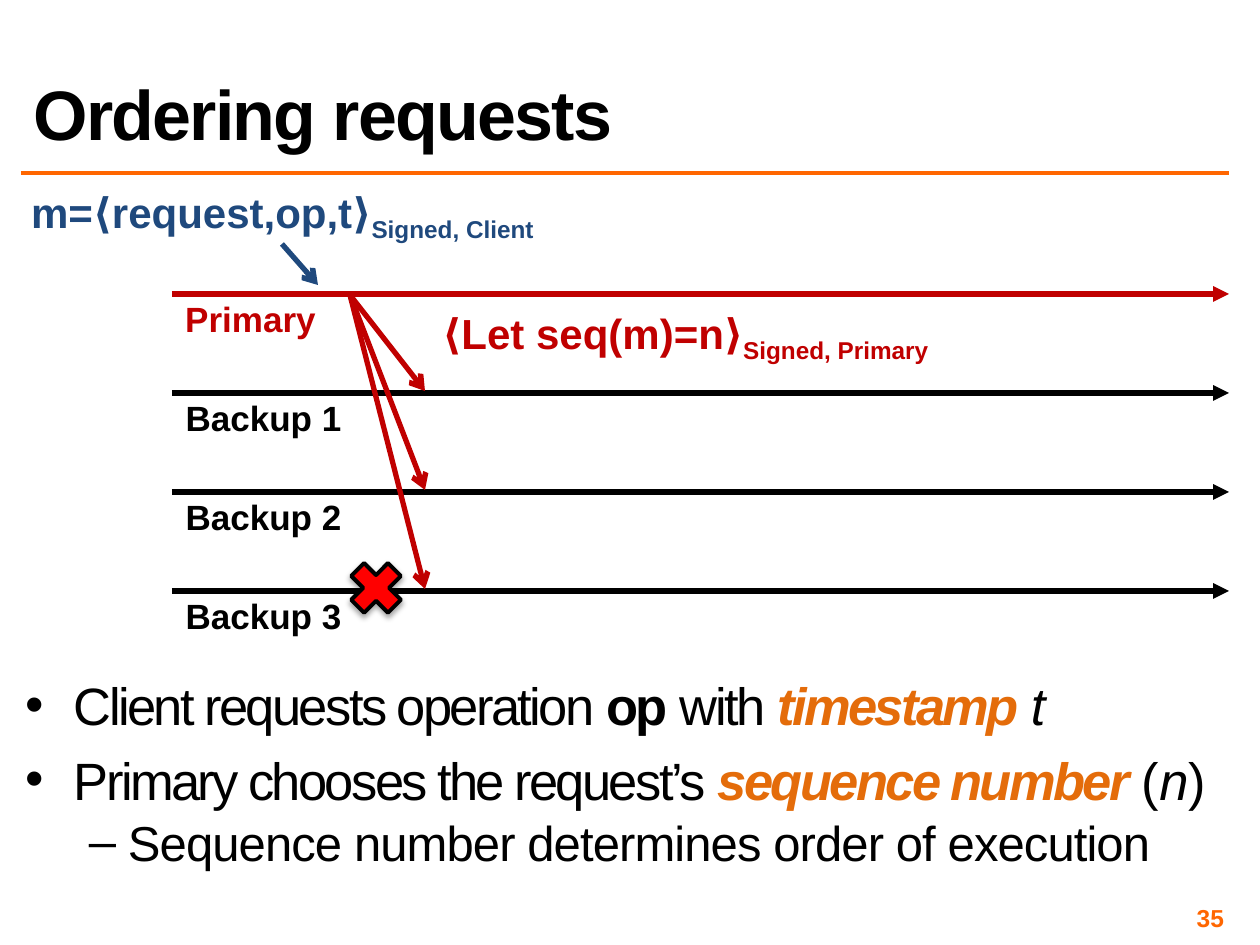
import pptx
import pptx.util
import pptx.dml.color
import pptx.enum.shapes
import pptx.enum.text
import pptx.oxml
import pptx.oxml.ns

BLACK = pptx.dml.color.RGBColor(0x00, 0x00, 0x00)
RED = pptx.dml.color.RGBColor(0xC0, 0x00, 0x00)
BRIGHT_RED = pptx.dml.color.RGBColor(0xFF, 0x00, 0x00)
NAVY = pptx.dml.color.RGBColor(0x1F, 0x49, 0x7D)
ORANGE = pptx.dml.color.RGBColor(0xFF, 0x66, 0x00)
DARK_ORANGE = pptx.dml.color.RGBColor(0xE4, 0x6C, 0x0A)
NAMESPACE = pptx.oxml.ns.nsdecls("a")
ALIGN = pptx.enum.text.PP_ALIGN
ANCHOR = pptx.enum.text.MSO_ANCHOR


def px(value):
    return pptx.util.Emu(round(value * 914400 / 126))


class SlideBuilder:
    font_name = "Arial"

    def __init__(self, presentation):
        self.slide = presentation.slides.add_slide(presentation.slide_layouts[5])

    def place(self, shape, box):
        for name, value in zip(("left", "top", "width", "height"), box):
            setattr(shape, name, px(value))

    def add_run(self, paragraph, text, size, color=BLACK, spacing=0, baseline=0, **formats):
        run = paragraph.add_run()
        run.text = text
        values = {"name": self.font_name, "size": pptx.util.Pt(size), **formats}
        for name, value in values.items():
            setattr(run.font, name, value)
        run.font.color.rgb = color
        properties = run._r.get_or_add_rPr()
        for name, value in {"spc": spacing, "baseline": baseline}.items():
            if value:
                properties.set(name, str(value))

    def set_frame(self, shape, **formats):
        for name, value in formats.items():
            setattr(shape.text_frame, name, value)
        return shape.text_frame

    def title(self, text, box):
        shape = self.slide.shapes.title
        self.place(shape, box)
        frame = self.set_frame(shape, vertical_anchor=ANCHOR.BOTTOM, word_wrap=True,
                               auto_size=pptx.enum.text.MSO_AUTO_SIZE.NONE)
        paragraph = frame.paragraphs[0]
        paragraph.alignment = ALIGN.LEFT
        paragraph.line_spacing = 0.8
        self.add_run(paragraph, text, 40, bold=True, spacing=-100)

    def text(self, box, runs, align=ALIGN.CENTER, **formats):
        shape = self.slide.shapes.add_textbox(*map(px, box))
        frame = self.set_frame(shape, **{"word_wrap": False, **formats})
        paragraph = frame.paragraphs[0]
        paragraph.alignment = align
        for text, style in runs:
            self.add_run(paragraph, text, **style)

    def message(self, box, text, signers, color):
        style = {"size": 24, "color": color, "bold": True}
        self.text(box, [(text, style), (signers, {**style, "baseline": -25000})])

    def bullets(self, box, items):
        shape = self.slide.shapes.add_textbox(*map(px, box))
        margins = ("margin_left", "margin_top", "margin_right", "margin_bottom")
        frame = self.set_frame(shape, word_wrap=True, **dict.fromkeys(margins, px(5)))
        levels = [
            {"bullet": "•", "left": 48, "hang": 48, "before": 14, "size": 30, "spacing": -150},
            {"bullet": "–", "left": 102, "hang": 39, "before": 8, "size": 28, "spacing": -50},
        ]
        for index, (level, runs) in enumerate(items):
            style = levels[level]
            paragraph = frame.add_paragraph() if index else frame.paragraphs[0]
            paragraph.level = level
            paragraph.line_spacing = 0.8
            paragraph.space_before = pptx.util.Pt(style["before"])
            properties = paragraph._p.get_or_add_pPr()
            properties.set("marL", str(px(style["left"])))
            properties.set("indent", str(px(-style["hang"])))
            for xml in (f'<a:buFont {NAMESPACE} typeface="{self.font_name}"/>',
                        f'<a:buChar {NAMESPACE} char="{style["bullet"]}"/>'):
                properties.append(pptx.oxml.parse_xml(xml))
            for text, formats in runs:
                self.add_run(paragraph, text, style["size"], spacing=style["spacing"], **formats)

    def line(self, start, end, color, width=3, head=None):
        connector = self.slide.shapes.add_connector(
            pptx.enum.shapes.MSO_CONNECTOR.STRAIGHT, *map(px, start + end))
        connector.line.color.rgb = color
        connector.line.width = pptx.util.Pt(width)
        if head:
            connector.line._get_or_add_ln().append(
                pptx.oxml.parse_xml(f'<a:tailEnd {NAMESPACE} type="{head}"/>'))
        connector._element.spPr.append(pptx.oxml.parse_xml(f"<a:effectLst {NAMESPACE}/>"))

    def failure_cross(self, box):
        shape = self.slide.shapes.add_shape(pptx.enum.shapes.MSO_SHAPE.CROSS, *map(px, box))
        shape.adjustments[0] = 0.325
        shape.rotation = 45
        shape.fill.solid()
        shape.fill.fore_color.rgb = BRIGHT_RED
        shape.line.color.rgb = BLACK
        shape.line.width = pptx.util.Pt(2.25)
        shape.line._get_or_add_ln().append(pptx.oxml.parse_xml(f"<a:round {NAMESPACE}/>"))
        shape._element.spPr.append(pptx.oxml.parse_xml(
            f'<a:effectLst {NAMESPACE}><a:outerShdw blurRad="39370" dist="22860" '
            'dir="5400000" rotWithShape="0"><a:srgbClr val="000000">'
            '<a:alpha val="35000"/></a:srgbClr></a:outerShdw></a:effectLst>'))


def main():
    presentation = pptx.Presentation()
    presentation.slide_width = px(1260)
    presentation.slide_height = px(945)
    builder = SlideBuilder(presentation)

    # Heading, rule and slide number
    builder.line((21, 173), (1229, 173), ORANGE, width=2)
    builder.title("Ordering requests", (21, 13, 1207, 147))
    builder.text((935, 903, 294, 29), [("35", {"size": 14, "color": ORANGE, "bold": True})],
                 align=ALIGN.RIGHT, word_wrap=True, vertical_anchor=ANCHOR.MIDDLE,
                 margin_left=px(5), margin_right=px(5), margin_top=px(5), margin_bottom=px(5))

    # Explanation
    emphasis = {"color": DARK_ORANGE, "bold": True, "italic": True}
    builder.bullets((21, 680, 1207, 210), [
        (0, [("Client requests operation ", {}), ("op", {"bold": True}), (" with ", {}),
             ("timestamp ", emphasis), ("t", {"italic": True})]),
        (0, [("Primary chooses the request’s ", {}), ("sequence number ", emphasis),
             ("(", {}), ("n", {"italic": True}), (")", {})]),
        (1, [("Sequence number determines order of execution", {})]),
    ])

    # Timelines of the replicas
    first_row, row_step = 294, 99
    replicas = [("Primary", 157, RED)]
    replicas += [(f"Backup {number}", 183, BLACK) for number in (1, 2, 3)]
    for index, (name, width, color) in enumerate(replicas):
        y = first_row + index * row_step
        builder.line((172, y), (1229, y), color, head="triangle")
        builder.text((172, y - 3, width, 55), [(name, {"size": 20, "color": color, "bold": True})])

    # Client request
    builder.message((8, 180, 549, 63), "m=⟨request,op,t⟩", "Signed, Client", NAVY)
    builder.line((282, 244), (318, 285), NAVY, head="arrow")

    # Failed backup
    builder.failure_cross((350, 562, 52, 52))

    # Primary sends the sequence number to the backups
    for index in (1, 2, 3):
        builder.line((350, 295), (425, first_row + index * row_step - 2), RED, head="arrow")
    builder.message((417, 301, 537, 63), "⟨Let seq(m)=n⟩", "Signed, Primary", RED)

    presentation.save("out.pptx")


if __name__ == "__main__":
    main()
